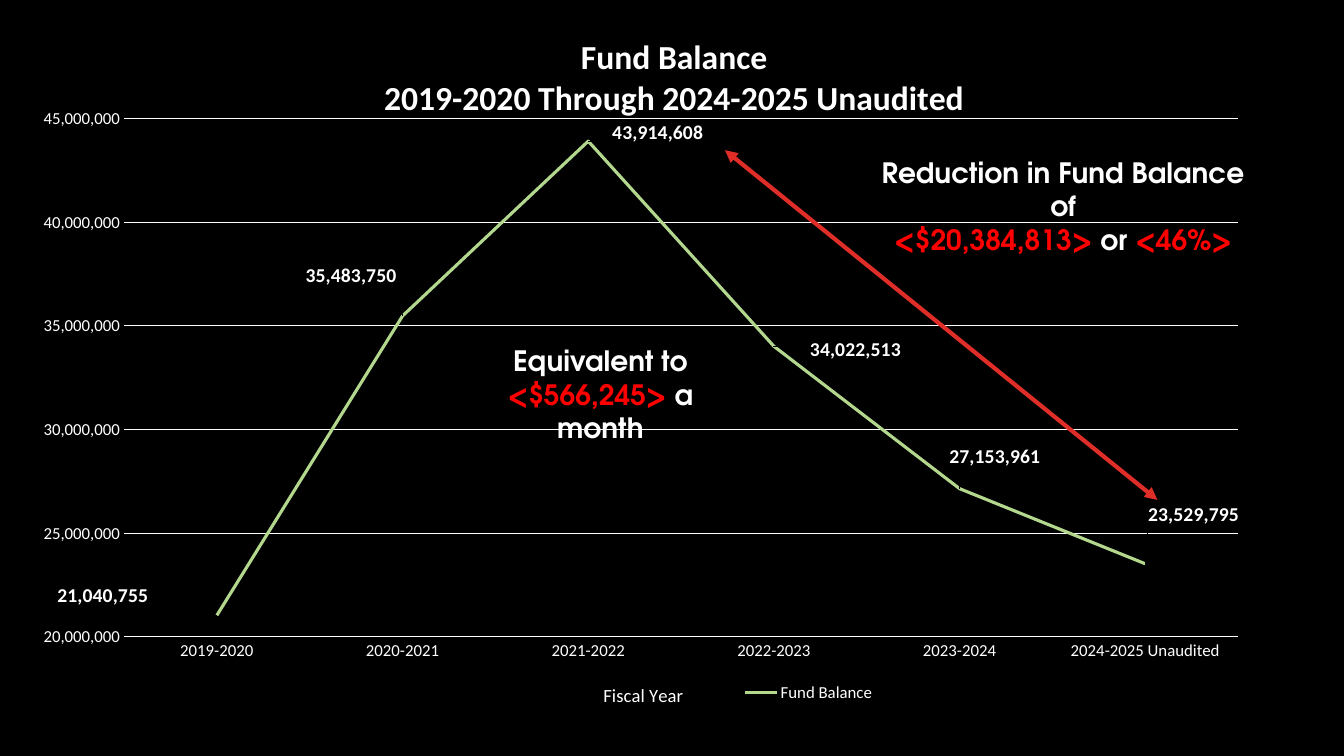
from pptx import Presentation
from pptx import util as u
from pptx.chart.data import CategoryChartData
from pptx.dml.color import RGBColor
from pptx.enum import chart as ch
from pptx.enum import shapes, text
from pptx.oxml import parse_xml
from pptx.oxml.ns import nsdecls, qn

BLACK = RGBColor(0x00, 0x00, 0x00)
WHITE = RGBColor(0xFF, 0xFF, 0xFF)
GREEN = RGBColor(0xB3, 0xD7, 0x8D)
ARROW_RED = RGBColor(0xDF, 0x2E, 0x28)
RED = RGBColor(0xFF, 0x00, 0x00)

CHART_W, CHART_H = 12.98, 7

BALANCES = [
    ("2019-2020", 21040755, -1.13, -0.04),
    ("2020-2021", 35483750, -0.51, -0.24),
    ("2021-2022", 43914608, 0.69, 0.08),
    ("2022-2023", 34022513, 0.81, 0.19),
    ("2023-2024", 27153961, 0.35, -0.16),
    ("2024-2025 Unaudited", 23529795, 0.48, -0.33),
]


class FundSlide:
    chart_font = "Calibri"
    note_font = "TeX Gyre Adventor"

    def __init__(self, prs):
        self.s = prs.slides.add_slide(prs.slide_layouts[6])
        fill = self.s.background.fill
        fill.solid()
        fill.fore_color.rgb = BLACK

    def style(self, font, size, color=WHITE, bold=False, name=chart_font):
        font.name = name
        font.size = u.Pt(size)
        font.bold = bold
        font.color.rgb = color

    def line(self, fmt, color, width):
        fmt.color.rgb = color
        fmt.width = u.Pt(width)

    def place(self, parent, index, x, y, w=None, h=None, edge=True, inner=False):
        old = parent.find(qn("c:layout"))
        if old is not None:
            parent.remove(old)
        parts = ['<c:layoutTarget val="inner"/>'] if inner else []
        if edge:
            parts += ['<c:xMode val="edge"/>', '<c:yMode val="edge"/>']
        for tag, value, whole in (("x", x, CHART_W), ("y", y, CHART_H),
                                  ("w", w, CHART_W), ("h", h, CHART_H)):
            if value is not None:
                parts.append(f'<c:{tag} val="{value / whole:.4f}"/>')
        parent.insert(index, parse_xml(
            f'<c:layout {nsdecls("c")}><c:manualLayout>{"".join(parts)}'
            '</c:manualLayout></c:layout>'))

    def title(self, title, lines, size, bold, x, y):
        tf = title.text_frame
        for i, words in enumerate(lines):
            p = tf.paragraphs[0] if i == 0 else tf.add_paragraph()
            r = p.add_run()
            r.text = words
            self.style(r.font, size, bold=bold)
        self.place(title._element, 1, x, y)

    def chart(self, x, y):
        data = CategoryChartData(number_format="#,##0")
        data.categories = [row[0] for row in BALANCES]
        data.add_series("Fund Balance", [row[1] for row in BALANCES])
        chart = self.s.shapes.add_chart(
            ch.XL_CHART_TYPE.LINE, u.Inches(x), u.Inches(y),
            u.Inches(CHART_W), u.Inches(CHART_H), data).chart
        self.style(chart.font, 12)
        chart.has_title = True
        self.title(chart.chart_title,
                   ["Fund Balance", "2019-2020 Through 2024-2025 Unaudited"],
                   24, True, 3.61, 0.25)
        self.place(chart._chartSpace.chart.plotArea, 0,
                   1.06, 1.1, 11.05, 5.15, inner=True)
        self.axes(chart)
        self.series(chart.plots[0])
        chart.has_legend = True
        legend = chart.legend
        legend.position = ch.XL_LEGEND_POSITION.BOTTOM
        legend.include_in_layout = False
        self.style(legend.font, 12)
        self.place(legend._element, 1, 7.15, 6.66, 1.4, 0.28)

    def axes(self, chart):
        cat, val = chart.category_axis, chart.value_axis
        for axis in (cat, val):
            axis.major_tick_mark = ch.XL_TICK_MARK.NONE
            axis.minor_tick_mark = ch.XL_TICK_MARK.NONE
            self.style(axis.tick_labels.font, 12)
        self.line(cat.format.line, WHITE, 0.75)
        self.title(cat.axis_title, ["Fiscal Year"], 13.3, False, 5.78, 6.67)
        val.minimum_scale, val.maximum_scale = 20000000, 45000000
        val.major_unit = 5000000
        val.tick_labels.number_format = "#,##0"
        val.tick_labels.number_format_is_linked = False
        val.format.line.fill.background()
        self.line(val.major_gridlines.format.line, WHITE, 0.75)

    def series(self, plot):
        plot.vary_by_categories = False
        balance = plot.series[0]
        balance.smooth = False
        balance.marker.style = ch.XL_MARKER_STYLE.NONE
        self.line(balance.format.line, GREEN, 2.25)
        for i, (_, _, dx, dy) in enumerate(BALANCES):
            label = balance.points[i].data_label
            self.style(label.font, 14, bold=True)
            label.position = ch.XL_LABEL_POSITION.ABOVE
        for dlbl, (_, _, dx, dy) in zip(balance._element.iter(qn("c:dLbl")), BALANCES):
            self.place(dlbl, 1, dx, dy, edge=False)

    def arrow(self, x1, y1, x2, y2):
        c = self.s.shapes.add_connector(
            shapes.MSO_CONNECTOR.STRAIGHT,
            u.Inches(x1), u.Inches(y1), u.Inches(x2), u.Inches(y2))
        self.line(c.line, ARROW_RED, 3)
        ln = c.line._get_or_add_ln()
        for end in ("headEnd", "tailEnd"):
            ln.append(parse_xml(f'<a:{end} {nsdecls("a")} type="triangle"/>'))
        c._element.spPr.append(parse_xml(f'<a:effectLst {nsdecls("a")}/>'))

    def note(self, x, y, w, h, paragraphs):
        sp = self.s.shapes.add_textbox(*map(u.Inches, (x, y, w, h)))
        tf = sp.text_frame
        tf.word_wrap = True
        tf.auto_size = text.MSO_AUTO_SIZE.SHAPE_TO_FIT_TEXT
        for i, runs in enumerate(paragraphs):
            p = tf.paragraphs[0] if i == 0 else tf.add_paragraph()
            p.alignment = text.PP_ALIGN.CENTER
            for words, color in runs:
                r = p.add_run()
                r.text = words
                self.style(r.font, 20, color, True, self.note_font)


def main():
    prs = Presentation()
    prs.slide_width, prs.slide_height = u.Inches(13.33), u.Inches(7.5)
    slide = FundSlide(prs)
    slide.chart(0.17, 0.08)
    slide.arrow(7.19, 1.49, 11.48, 4.96)
    slide.note(8.63, 1.49, 3.83, 1.11, [
        [("Reduction in Fund Balance", WHITE)],
        [("of", WHITE)],
        [("<$20,384,813> ", RED), ("or ", WHITE), ("<46%>", RED)],
    ])
    slide.note(4.49, 3.36, 2.93, 0.77, [
        [("Equivalent to", WHITE)],
        [("<$566,245> ", RED), ("a month", WHITE)],
    ])
    prs.save("out.pptx")


if __name__ == "__main__":
    main()
